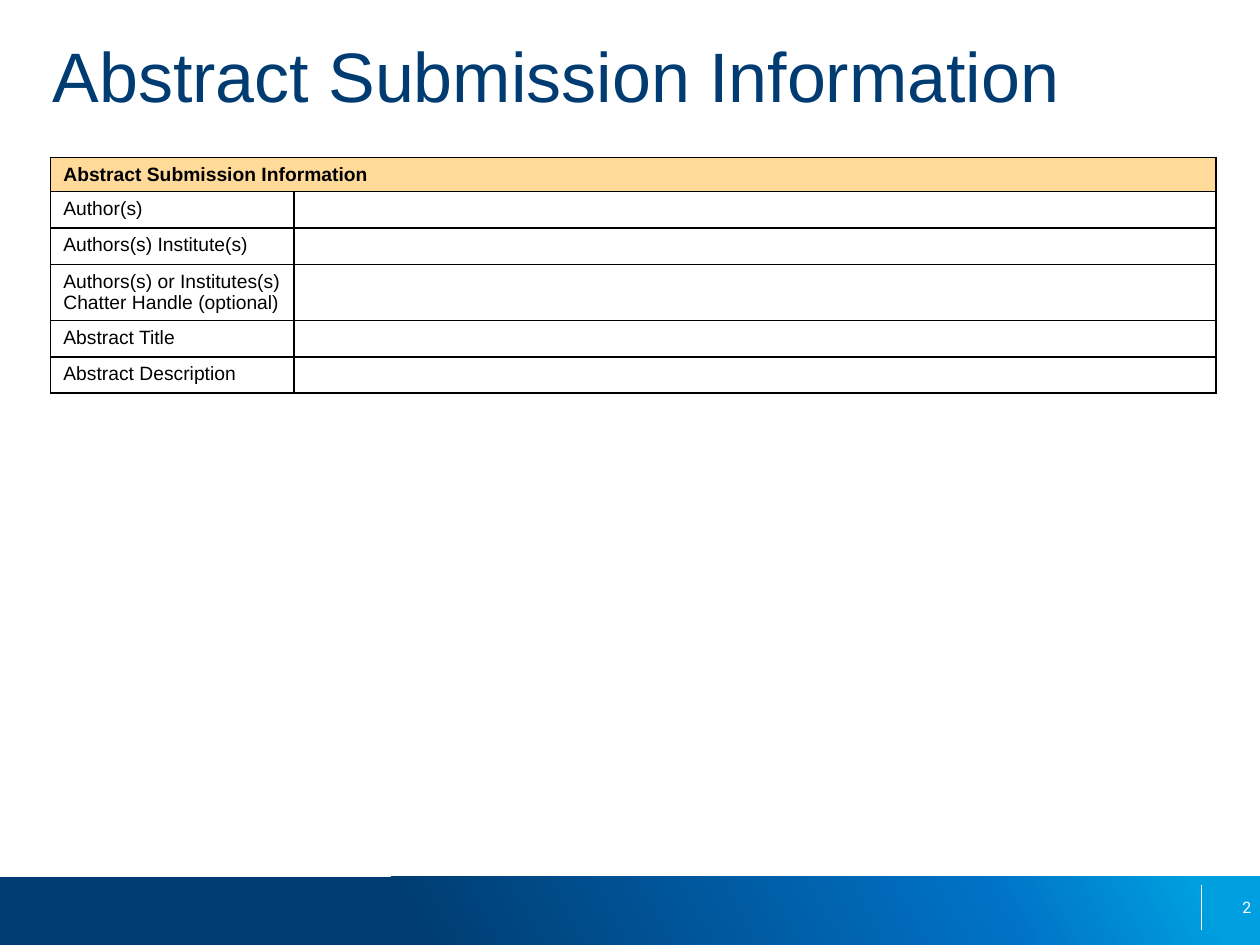
import copy

import lxml.etree
import pptx
import pptx.dml.color
import pptx.enum.shapes
import pptx.enum.text
import pptx.oxml.ns
import pptx.util

Pt = pptx.util.Pt
qn = pptx.oxml.ns.qn
SubElement = lxml.etree.SubElement
COLORS = {
    "navy": "003C71",
    "blue": "0071C5",
    "sky": "009FDF",
    "header": "FFDA99",
    "black": "000000",
    "white": "FFFFFF",
}


def rgb(name):
    return pptx.dml.color.RGBColor.from_string(COLORS[name])


def add_text(frame, text, size, font, color, bold=None):
    """Add one formatted run to the first paragraph and return the paragraph."""
    paragraph = frame.paragraphs[0]
    run = paragraph.add_run()
    run.text = text
    run.font.size = Pt(size)
    run.font.name = font
    run.font.bold = bold
    run.font.color.rgb = rgb(color)
    return paragraph


prs = pptx.Presentation()
prs.slide_width, prs.slide_height = Pt(720), Pt(540)
slide = prs.slides.add_slide(prs.slide_layouts[5])
shapes = slide.shapes

# Footer band
footer = shapes.add_shape(
    pptx.enum.shapes.MSO_SHAPE.RECTANGLE, Pt(0), Pt(501), Pt(720), Pt(40)
)
footer.shadow.inherit = False
footer.line.fill.background()
footer.fill.gradient()
footer.fill.gradient_angle = 29
stop_list = footer._element.spPr.find(qn("a:gradFill")).find(qn("a:gsLst"))
stop_list.append(copy.deepcopy(stop_list[-1]))
band_stops = [("navy", 0.32), ("blue", 0.78), ("sky", 0.95)]
for stop, (color, position) in zip(footer.fill.gradient_stops, band_stops):
    stop.color.rgb = rgb(color)
    stop.position = position

divider = shapes.add_connector(
    pptx.enum.shapes.MSO_CONNECTOR.STRAIGHT, Pt(686.5), Pt(506), Pt(686.5), Pt(531.5)
)
divider.line.color.rgb = rgb("white")
divider.line.width = Pt(0.75)
SubElement(divider._element.spPr, qn("a:effectLst"))

# Title
title = shapes.title
title.left, title.top, title.width, title.height = Pt(30), Pt(12), Pt(648), Pt(54)
frame = title.text_frame
frame.margin_left = frame.margin_top = frame.margin_right = frame.margin_bottom = 0
frame.vertical_anchor = pptx.enum.text.MSO_ANCHOR.BOTTOM
frame.auto_size = pptx.enum.text.MSO_AUTO_SIZE.NONE
heading = add_text(frame, "Abstract Submission Information", 40, "Arial", "navy")
heading.alignment = pptx.enum.text.PP_ALIGN.LEFT
heading.line_spacing = 0.8

# Submission form
form_rows = [
    ("Abstract Submission Information", 19.4),
    ("Author(s)", 19.4),
    ("Authors(s) Institute(s)", 19.4),
    ("Authors(s) or Institutes(s) Chatter Handle (optional)", 32),
    ("Abstract Title", 19.4),
    ("Abstract Description", 19.4),
]
form = shapes.add_table(len(form_rows), 2, Pt(29), Pt(90), Pt(666), Pt(129)).table
form.first_row = form.horz_banding = False
form.columns[0].width, form.columns[1].width = Pt(139), Pt(527)
form.cell(0, 0).merge(form.cell(0, 1))
for index, (label, height) in enumerate(form_rows):
    form.rows[index].height = Pt(height)
    for column in range(2):
        cell = form.cell(index, column)
        if column == 0:
            add_text(cell.text_frame, label, 11, "Arial", "black", index == 0)
        else:
            SubElement(cell.text_frame.paragraphs[0]._p, qn("a:endParaRPr"), sz="1100")
        properties = cell._tc.get_or_add_tcPr()
        for side in ("a:lnL", "a:lnR", "a:lnT", "a:lnB"):
            border = SubElement(properties, qn(side), w=str(Pt(1)))
            border_fill = SubElement(border, qn("a:solidFill"))
            SubElement(border_fill, qn("a:srgbClr"), val=COLORS["black"])
        cell.fill.solid()
        cell.fill.fore_color.rgb = rgb("white" if index else "header")

# Page number
page_number = shapes.add_textbox(Pt(695), Pt(504), Pt(20), Pt(29))
frame = page_number.text_frame
frame.word_wrap = True
frame.margin_left = frame.margin_top = frame.margin_right = frame.margin_bottom = 0
frame.vertical_anchor = pptx.enum.text.MSO_ANCHOR.MIDDLE
number = add_text(frame, "2", 9, "Roboto", "white")
number.alignment = pptx.enum.text.PP_ALIGN.RIGHT

prs.save("out.pptx")
